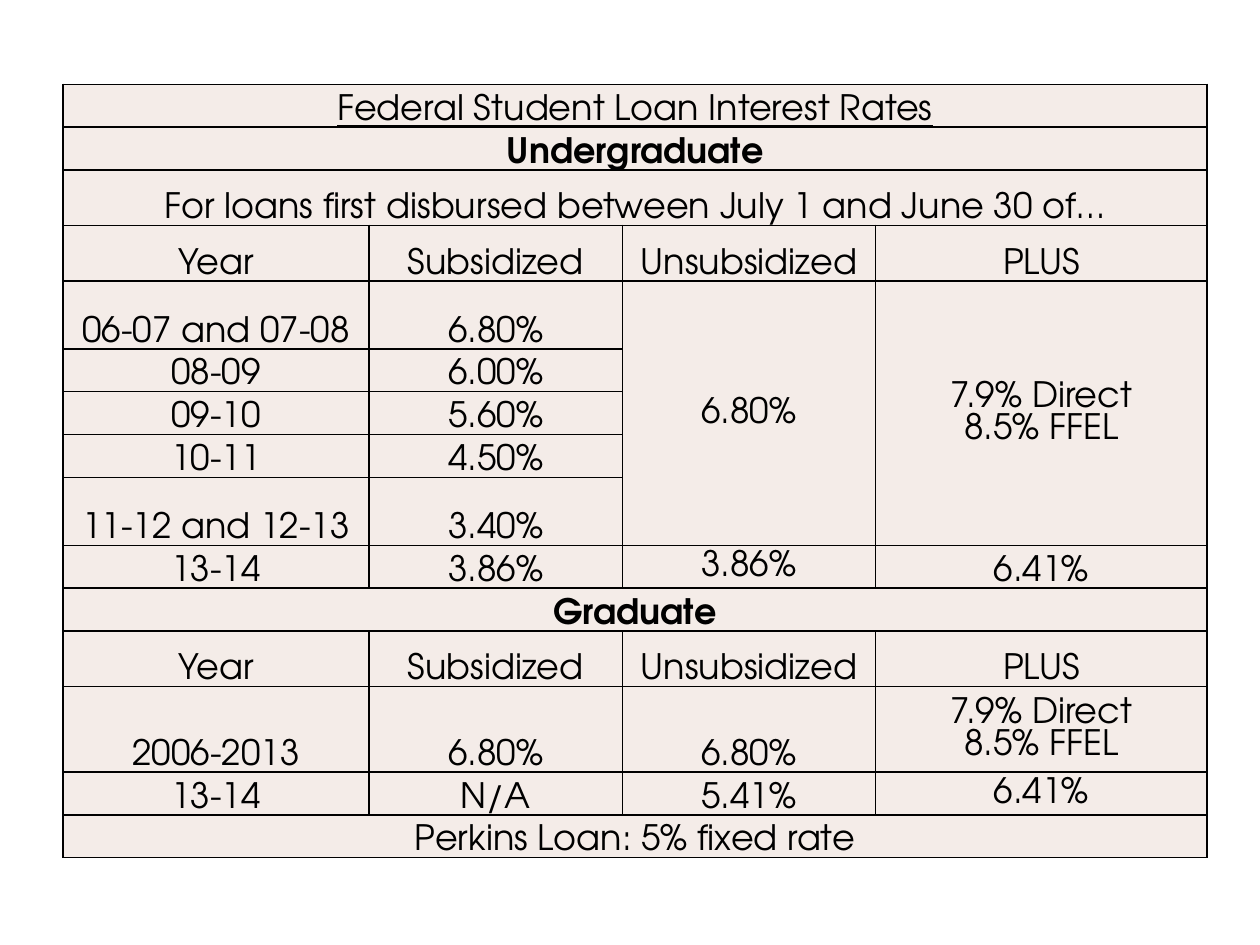
import pptx
import pptx.dml.color
import pptx.enum.text
import pptx.oxml
import pptx.oxml.ns
import pptx.util

PALE_PINK = pptx.dml.color.RGBColor(0xF4, 0xEC, 0xE8)
BLACK = pptx.dml.color.RGBColor(0, 0, 0)
FONT = "TeX Gyre Adventor"
MIDDLE = pptx.enum.text.MSO_ANCHOR.MIDDLE
BOTTOM = pptx.enum.text.MSO_ANCHOR.BOTTOM

TITLE = "Federal Student Loan Interest Rates"
LEVELS = ("Undergraduate", "Graduate")
HEADINGS = ["Year", "Subsidized", "Unsubsidized", "PLUS"]
PLUS_RATES = "7.9% Direct\v8.5% FFEL"

LINE, HEADING, TALL, DOUBLE = 0.34, 0.44, 0.54, 0.68
rates = [
    (LINE, [TITLE]),
    (LINE, ["Undergraduate"]),
    (HEADING, ["For loans first disbursed between July 1 and June 30 of…"]),
    (HEADING, HEADINGS),
    (TALL, ["06-07 and 07-08", "6.80%", "6.80%", PLUS_RATES]),
    (LINE, ["08-09", "6.00%"]),
    (LINE, ["09-10", "5.60%"]),
    (LINE, ["10-11", "4.50%"]),
    (TALL, ["11-12 and 12-13", "3.40%"]),
    (LINE, ["13-14", "3.86%", "3.86%", "6.41%"]),
    (LINE, ["Graduate"]),
    (HEADING, HEADINGS),
    (DOUBLE, ["2006-2013", "6.80%", "6.80%", PLUS_RATES]),
    (LINE, ["13-14", "N/A", "5.41%", "6.41%"]),
    (LINE, ["Perkins Loan: 5% fixed rate"]),
]
column_widths = [2.43, 2.01, 2.01, 2.63]
middle_cells = {(4, 2), (4, 3), (9, 2), (12, 3), (13, 3)}


def add_borders(cell):
    properties = cell._tc.get_or_add_tcPr()
    for position, side in enumerate(("lnL", "lnR", "lnT", "lnB")):
        properties.insert(position, pptx.oxml.parse_xml(
            f'<a:{side} {pptx.oxml.ns.nsdecls("a")} w="12700"><a:solidFill>'
            f'<a:srgbClr val="{BLACK}"/></a:solidFill></a:{side}>'))


deck = pptx.Presentation()
deck.slide_width = pptx.util.Inches(10)
deck.slide_height = pptx.util.Inches(7.5)
slide = deck.slides.add_slide(deck.slide_layouts[6])

loans = slide.shapes.add_table(
    len(rates), len(column_widths),
    pptx.util.Inches(0.5), pptx.util.Inches(0.67),
    pptx.util.Inches(sum(column_widths)),
    pptx.util.Inches(sum(height for height, entries in rates))).table
loans.first_row = False
loans.horz_banding = False

for column, width in zip(loans.columns, column_widths):
    column.width = pptx.util.Inches(width)

for row, (height, entries) in enumerate(rates):
    loans.rows[row].height = pptx.util.Inches(height)
    for column in range(len(column_widths)):
        cell = loans.cell(row, column)
        cell.margin_left = cell.margin_right = cell.margin_top = pptx.util.Inches(0.01)
        cell.margin_bottom = 0
        cell.fill.solid()
        cell.fill.fore_color.rgb = PALE_PINK
        add_borders(cell)
        cell.vertical_anchor = MIDDLE if (row, column) in middle_cells else BOTTOM
        if column >= len(entries):
            continue
        entry = entries[column]
        paragraph = cell.text_frame.paragraphs[0]
        paragraph.text = entry
        paragraph.alignment = pptx.enum.text.PP_ALIGN.CENTER
        for run in paragraph.runs:
            run.font.name = FONT
            run.font.size = pptx.util.Pt(20)
            run.font.color.rgb = BLACK
            run.font.bold = entry in LEVELS
            run.font.underline = entry == TITLE
    if len(entries) == 1:
        loans.cell(row, 0).merge(loans.cell(row, 3))

for column in (2, 3):
    loans.cell(4, column).merge(loans.cell(8, column))

deck.save("out.pptx")
